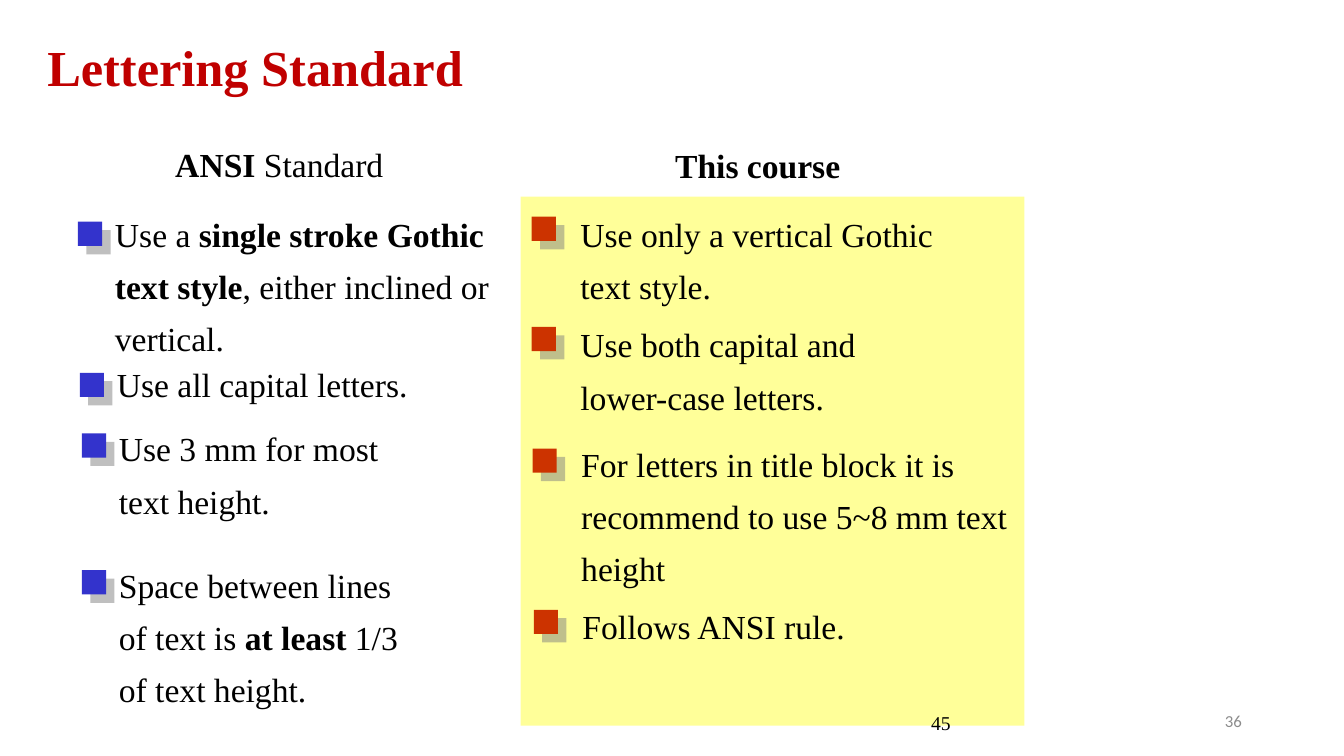
from lxml import etree
from pptx import Presentation
from pptx.dml.color import RGBColor
from pptx.enum import shapes, text
from pptx.oxml import ns
from pptx.util import Pt

HUES = {"red": "C00000", "ink": "000000", "pale": "FFFF99", "blue": "3333CC",
        "rust": "CC3300", "grey": "8C8C8C", "shade": "808080"}
SERIF = "Times New Roman"
MARK = 17.3  # side of a square bullet


def write(frame, words, size=24, font=SERIF, hue="ink", bold=False,
          align="LEFT", anchor="TOP", lead=None, wrap=False):
    """Fill a frame; newlines split paragraphs and ** toggles bold."""
    frame.word_wrap = wrap
    frame.auto_size = text.MSO_AUTO_SIZE.NONE
    frame.vertical_anchor = text.MSO_ANCHOR[anchor]
    for i, line in enumerate(words.split("\n")):
        para = frame.add_paragraph() if i else frame.paragraphs[0]
        para.alignment = text.PP_ALIGN[align]
        if lead:
            para.line_spacing = lead
        for j, part in enumerate(line.split("**")):
            if not part:
                continue
            run = para.add_run()
            run.text = part
            run.font.size = Pt(size)
            run.font.name = font
            run.font.bold = bold or j % 2 == 1
            run.font.color.rgb = RGBColor.from_string(HUES[hue])


class Deck:
    def __init__(self, wide, high):
        self.show = Presentation()
        self.show.slide_width, self.show.slide_height = Pt(wide), Pt(high)
        self.slide = self.show.slides.add_slide(self.show.slide_layouts[5])

    def title(self, box, words, **style):
        head = self.slide.shapes.title
        head.left, head.top, head.width, head.height = map(Pt, box)
        write(head.text_frame, words, **style)

    def label(self, box, words, home=None, **style):
        home = home or self.slide.shapes
        write(home.add_textbox(*map(Pt, box)).text_frame, words, **style)

    def block(self, box, hue, home=None):
        home = home or self.slide.shapes
        rect = home.add_shape(shapes.MSO_SHAPE.RECTANGLE, *map(Pt, box))
        rect.fill.solid()
        rect.fill.fore_color.rgb = RGBColor.from_string(HUES[hue])
        rect.line.fill.background()
        rect.shadow.inherit = False
        return rect

    def mark(self, left, top, hue, home):
        rect = self.block((left, top, MARK, MARK), hue, home)
        # Hard half-clear shadow, 8.5 pt down and right
        glow = rect._element.spPr.find(ns.qn("a:effectLst"))
        cast = etree.SubElement(glow, ns.qn("a:outerShdw"), blurRad="0",
                                dist=str(Pt(8.5)), dir="2700000",
                                algn="ctr", rotWithShape="0")
        tint = etree.SubElement(cast, ns.qn("a:srgbClr"), val=HUES["shade"])
        etree.SubElement(tint, ns.qn("a:alpha"), val="50000")

    def point(self, box, drop, words, hue, gap, lead=1.3, wrap=False):
        """A marked point: gap and drop place the mark from the text box."""
        home = self.slide.shapes.add_group_shape().shapes
        self.label(box, words, home, lead=lead, wrap=wrap)
        self.mark(box[0] - gap, box[1] + drop, hue, home)


def main():
    deck = Deck(960, 540)

    # Panel and headings
    deck.block((371.9, 140.4, 359.8, 378), "pale")
    deck.title((26.6, 2.2, 612, 90), "Lettering Standard", size=36, hue="red",
               bold=True, anchor="MIDDLE", wrap=True)
    deck.label((118.1, 99.4, 164.9, 36), "**ANSI** Standard")
    deck.label((475.2, 100.1, 133.9, 36), "This course", bold=True)

    # ANSI column: box, mark drop, words, extras
    for box, drop, words, more in [
        ((75, 140.4, 293.8, 121), 18,
         "Use a **single stroke Gothic text style**, either inclined or vertical.",
         {"wrap": True}),
        ((76.3, 256.3, 223.9, 36.7), 10, "Use all capital letters.", {"lead": 1}),
        ((77.8, 293.8, 201.6, 82.8), 15.8, "Use 3 mm for most\ntext height.", {}),
        ((77.8, 391, 215.3, 121), 16.3,
         "Space between lines\nof text is **at least** 1/3\nof text height.", {}),
    ]:
        deck.point(box, drop, words, "blue", 19.3, **more)

    # Course column
    for box, drop, words, more in [
        ((407.5, 140.4, 268.6, 82.8), 14.4,
         "Use only a vertical Gothic\ntext style.", {}),
        ((407.5, 219.3, 213.1, 82.8), 14.2,
         "Use both capital and\nlower-case letters.", {}),
        ((408.1, 304.6, 326.2, 121), 15.8,
         "For letters in title block it is recommend to use 5~8 mm text height",
         {"wrap": True}),
        ((409, 420.5, 203.8, 45.4), 15.1, "Follows ANSI rule.", {}),
    ]:
        deck.point(box, drop, words, "rust", 27.7, **more)

    # Page numbers
    deck.label((536.4, 504, 149.8, 36), "45", size=14, align="RIGHT", wrap=True)
    deck.label((678.2, 500.4, 216, 28.8), "36", size=12, font="Calibri",
               hue="grey", align="RIGHT", anchor="MIDDLE", wrap=True)

    deck.show.save("out.pptx")


if __name__ == "__main__":
    main()
